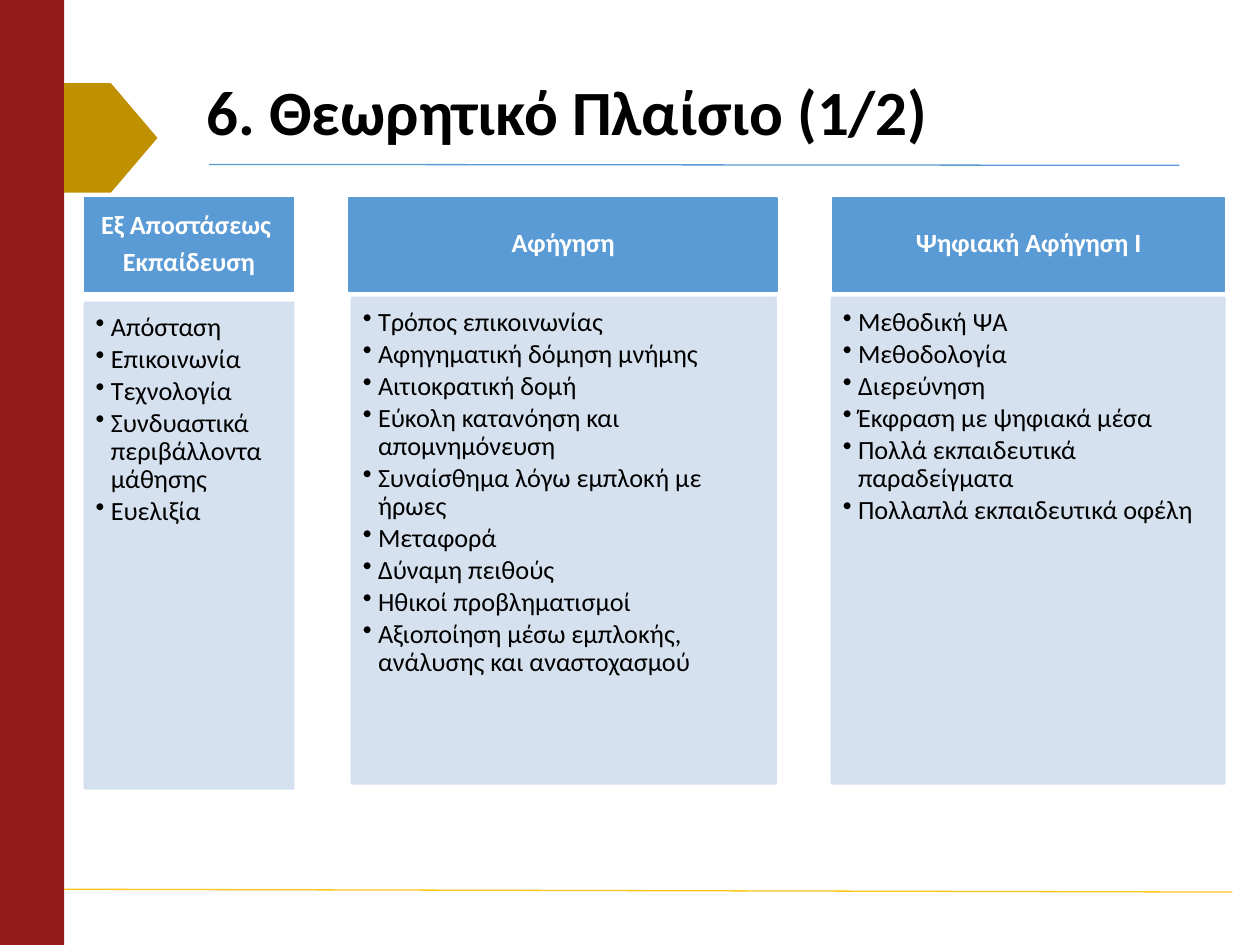
"""Build the theoretical framework slide: three headed columns of bullet points."""
from dataclasses import dataclass

from lxml.etree import SubElement
from pptx import Presentation
from pptx.dml.color import RGBColor
from pptx.enum.shapes import MSO_CONNECTOR as Connector, MSO_SHAPE as Shape
from pptx.enum.text import MSO_ANCHOR as Anchor, PP_ALIGN as Align
from pptx.oxml.ns import qn
from pptx.util import Inches, Pt

WIDTH, HEIGHT = Inches(10), Inches(7.5)


@dataclass(frozen=True)
class Theme:
    """Colours, font and type sizes of the slide."""
    font: str = "Calibri"
    title_size: float = 36
    text_size: float = 15
    ink: str = "000000"
    paper: str = "FFFFFF"
    band: str = "931B1B"
    tag: str = "BF9000"
    header: str = "5B9BD5"
    body: str = "D2DEEF"
    footer: str = "FFC61A"


@dataclass(frozen=True)
class Area:
    """A rectangle in percent of the slide's width and height."""
    left: float
    top: float
    width: float
    height: float

    def lengths(self) -> tuple:
        """Return left, top, width and height as slide lengths."""
        return (across(self.left), down(self.top), across(self.width), down(self.height))


@dataclass(frozen=True)
class TextStyle:
    """How the paragraphs of a box are set."""
    size: float
    color: str
    bold: bool = False
    align: Align = Align.LEFT
    anchor: Anchor = Anchor.MIDDLE
    insets: tuple = (0.1, 0.05, 0.1, 0.05)
    space_after: float = 0
    bullet: bool = False


@dataclass(frozen=True)
class Column:
    """A header with the bullet points below it."""
    header: Area
    body: Area
    heading: tuple
    points: tuple


THEME = Theme()
TITLE = TextStyle(THEME.title_size, THEME.ink, bold=True)
HEADING = TextStyle(THEME.text_size, THEME.paper, bold=True, align=Align.CENTER,
                    insets=(0.12, 0.07, 0.12, 0.07), space_after=5.25)
POINTS = TextStyle(THEME.text_size, THEME.ink, anchor=Anchor.TOP,
                   insets=(0.09, 0.09, 0.12, 0.13), space_after=2, bullet=True)
HEADER_TOP, HEADER_HEIGHT, BODY_TOP, BODY_HEIGHT = 20.93, 9.87, 31.47, 51.47

COLUMNS = (
    Column(Area(6.7, HEADER_TOP, 16.6, HEADER_HEIGHT), Area(6.7, 32, 16.6, BODY_HEIGHT),
           ("Εξ Αποστάσεως ", "Εκπαίδευση"),
           ("Απόσταση", "Επικοινωνία", "Τεχνολογία",
            "Συνδυαστικά περιβάλλοντα μάθησης", "Ευελιξία")),
    Column(Area(27.7, HEADER_TOP, 34, HEADER_HEIGHT), Area(27.9, BODY_TOP, 33.7, BODY_HEIGHT),
           ("Αφήγηση",),
           ("Τρόπος επικοινωνίας", "Αφηγηματική δόμηση μνήμης", "Αιτιοκρατική δομή",
            "Εύκολη κατανόηση και απομνημόνευση", "Συναίσθημα λόγω εμπλοκή με ήρωες",
            "Μεταφορά", "Δύναμη πειθούς", "Ηθικοί προβληματισμοί",
            "Αξιοποίηση μέσω εμπλοκής, ανάλυσης και αναστοχασμού")),
    Column(Area(66.1, HEADER_TOP, 31.1, HEADER_HEIGHT), Area(66, BODY_TOP, 31.2, BODY_HEIGHT),
           ("Ψηφιακή Αφήγηση Ι",),
           ("Μεθοδική ΨΑ", "Μεθοδολογία", "Διερεύνηση", "Έκφραση με ψηφιακά μέσα",
            "Πολλά εκπαιδευτικά παραδείγματα", "Πολλαπλά εκπαιδευτικά οφέλη")),
)


def across(percent: float) -> int:
    """Return a share of the slide's width."""
    return round(WIDTH * percent / 100)


def down(percent: float) -> int:
    """Return a share of the slide's height."""
    return round(HEIGHT * percent / 100)


def add_bullet(para) -> None:
    """Give a paragraph a hanging bullet."""
    properties = para._p.get_or_add_pPr()
    properties.set("marL", str(Inches(0.12)))
    properties.set("indent", str(-Inches(0.12)))
    SubElement(properties, qn("a:buChar"), char="•")


def write(box, lines: tuple, style: TextStyle) -> None:
    """Fill a box with one paragraph per line."""
    frame = box.text_frame
    frame.word_wrap = True
    frame.vertical_anchor = style.anchor
    (frame.margin_left, frame.margin_top,
     frame.margin_right, frame.margin_bottom) = map(Inches, style.insets)
    for index, line in enumerate(lines):
        para = frame.add_paragraph() if index else frame.paragraphs[0]
        para.alignment = style.align
        para.line_spacing = 0.9
        para.space_after = Pt(style.space_after)
        if style.bullet:
            add_bullet(para)
        span = para.add_run()
        span.text = line
        span.font.name = THEME.font
        span.font.size = Pt(style.size)
        span.font.bold = style.bold
        span.font.color.rgb = RGBColor.from_string(style.color)


def add_box(page, area: Area, color: str, kind=Shape.RECTANGLE,
            outlined: bool = False, opacity: int = 100):
    """Draw a filled shape, with a line of the same colour if outlined."""
    box = page.shapes.add_shape(kind, *area.lengths())
    box.shadow.inherit = False
    box.fill.solid()
    box.fill.fore_color.rgb = RGBColor.from_string(color)
    if outlined:
        box.line.color.rgb = RGBColor.from_string(color)
        box.line.width = Pt(1)
    else:
        box.line.fill.background()
    if opacity < 100:
        for tint in box._element.spPr.iter(qn("a:srgbClr")):
            SubElement(tint, qn("a:alpha"), val=str(opacity * 1000))
    return box


def add_rule(page, start: tuple, end: tuple, color: str) -> None:
    """Draw a thin line between two points."""
    rule = page.shapes.add_connector(Connector.STRAIGHT, across(start[0]), down(start[1]),
                                     across(end[0]), down(end[1]))
    rule.line.color.rgb = RGBColor.from_string(color)
    rule.line.width = Pt(0.75)
    SubElement(rule._element.spPr, qn("a:effectLst"))


def add_column(page, column: Column) -> None:
    """Draw a header and its bullet points."""
    header = add_box(page, column.header, THEME.header, outlined=True)
    write(header, column.heading, HEADING)
    body = add_box(page, column.body, THEME.body, outlined=True, opacity=90)
    write(body, column.points, POINTS)


def main() -> None:
    """Build and save the deck."""
    deck = Presentation()
    deck.slide_width, deck.slide_height = WIDTH, HEIGHT
    page = deck.slides.add_slide(deck.slide_layouts[6])
    add_box(page, Area(0, 0, 5.1, 100), THEME.band)
    add_rule(page, (16.6, 17.4), (93.6, 17.5), THEME.header)
    add_rule(page, (5.1, 94.1), (97.8, 94.4), THEME.footer)
    add_box(page, Area(5.1, 8.8, 7.4, 11.6), THEME.tag, Shape.PENTAGON)
    title = page.shapes.add_textbox(*Area(15.4, 8, 78.7, 8.4).lengths())
    write(title, ("6. Θεωρητικό Πλαίσιο (1/2)",), TITLE)
    for column in COLUMNS:
        add_column(page, column)
    deck.save("out.pptx")


if __name__ == "__main__":
    main()
